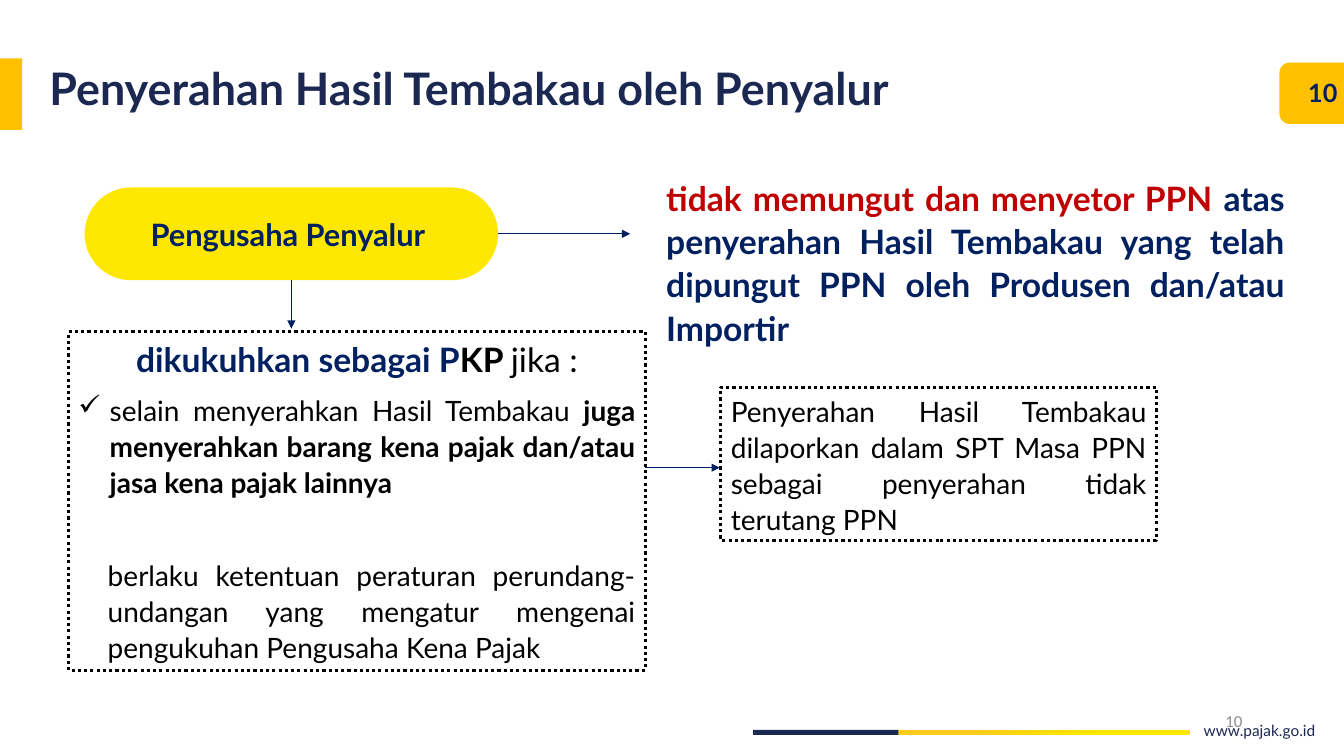
from collections import namedtuple

from lxml.etree import SubElement
from pptx import Presentation
from pptx.dml.color import RGBColor
from pptx.enum.dml import MSO_LINE
from pptx.enum.shapes import MSO_CONNECTOR, MSO_SHAPE
from pptx.enum.text import MSO_ANCHOR, PP_ALIGN
from pptx.oxml.ns import qn
from pptx.util import Inches, Pt

NAVY = RGBColor(0x00, 0x20, 0x60)
INDIGO = RGBColor(0x1B, 0x28, 0x52)
RED = RGBColor(0xC0, 0x00, 0x00)
BLACK = RGBColor(0x00, 0x00, 0x00)
GREY = RGBColor(0x8C, 0x8C, 0x8C)
AMBER = RGBColor(0xFF, 0xC0, 0x00)
GOLD = RGBColor(0xFF, 0xCA, 0x1A)
YELLOW = RGBColor(0xFE, 0xE8, 0x01)

Box = namedtuple("Box", "left top width height")
BODY = {"line_spacing": 1.07, "space_after": Pt(8)}
JUSTIFIED = {**BODY, "alignment": PP_ALIGN.JUSTIFY}
CENTRED = {"alignment": PP_ALIGN.CENTER}


def apply(target, values):
    """Set every attribute in values on target."""
    for name, value in values.items():
        setattr(target, name, value)


def place(box):
    """Turn a box in inches into slide lengths."""
    return [Inches(length) for length in box]


def inside(box, left, top, width, height):
    """Give a box offset from the corner of another."""
    return Box(box.left + left, box.top + top, width, height)


def write(shape, paragraphs, anchor=MSO_ANCHOR.TOP, **frame_values):
    """Fill a shape with (format, runs) paragraphs of (text, size, colour, bold) runs."""
    frame = shape.text_frame
    apply(frame, {"word_wrap": True, "vertical_anchor": anchor, **frame_values})
    for index, (layout, runs) in enumerate(paragraphs):
        paragraph = frame.add_paragraph() if index else frame.paragraphs[0]
        apply(paragraph, layout)
        for text, size, colour, bold in runs:
            run = paragraph.add_run()
            run.text = text
            apply(run.font, {"size": Pt(size), "name": "Lato", "bold": bold})
            run.font.color.rgb = colour
    return frame


def add_text(slide, box, paragraphs, **frame_values):
    """Add a text box."""
    return write(slide.shapes.add_textbox(*place(box)), paragraphs, **frame_values)


def add_block(slide, box, colour=None, kind=MSO_SHAPE.RECTANGLE):
    """Add a shape without outline, filled when a colour is given."""
    block = slide.shapes.add_shape(kind, *place(box))
    block.shadow.inherit = False
    block.line.fill.background()
    if colour is None:
        block.fill.background()
    else:
        block.fill.solid()
        block.fill.fore_color.rgb = colour
    return block


def add_dotted_panel(slide, box, paragraphs):
    """Add a dotted frame with text."""
    panel = add_block(slide, box)
    panel.line.color.rgb = BLACK
    apply(panel.line, {"width": Pt(2.25), "dash_style": MSO_LINE.ROUND_DOT})
    return write(panel, paragraphs)


def add_arrow(slide, *ends):
    """Add a thin arrow from x, y to x, y."""
    arrow = slide.shapes.add_connector(MSO_CONNECTOR.STRAIGHT, *place(ends))
    arrow.line.color.rgb = NAVY
    arrow.line.width = Pt(0.5)
    SubElement(arrow.line._get_or_add_ln(), qn("a:tailEnd"), type="triangle")
    SubElement(arrow._element.spPr, qn("a:effectLst"))


def indent(paragraph, margin, bullet=None):
    """Indent a paragraph, hanging it when it has a bullet."""
    properties = paragraph._p.get_or_add_pPr()
    properties.set("marL", str(Inches(margin)))
    properties.set("indent", str(-Inches(margin) if bullet else 0))
    if bullet:
        SubElement(properties, qn("a:buChar"), char=bullet)


def add_header(slide, box):
    """Add the title with its side tab and page badge."""
    add_block(slide, inside(box, 0, 0, 0.22, 0.71), AMBER)
    title = [({"line_spacing": 0.8},
              [("Penyerahan Hasil Tembakau oleh Penyalur", 32, INDIGO, True)])]
    add_text(slide, inside(box, 0.44, 0.08, 8.87, 0.94), title,
             margin_left=Inches(0.05), margin_right=Inches(0.05))
    add_block(slide, inside(box, 12.69, 0.04, 1.04, 0.61), AMBER,
              MSO_SHAPE.ROUNDED_RECTANGLE)
    add_text(slide, inside(box, 12.85, 0.14, 0.54, 0.4),
             [(CENTRED, [("10", 18, NAVY, True)])])


def add_distributor(slide, box):
    """Add the distributor pill with its two arrows."""
    pill = add_block(slide, box, YELLOW, MSO_SHAPE.ROUNDED_RECTANGLE)
    pill.adjustments[0] = 0.5
    write(pill, [(CENTRED, [("Pengusaha Penyalur ", 22, NAVY, True)])],
          MSO_ANCHOR.MIDDLE)
    centre, middle = box.left + box.width / 2, box.top + box.height / 2
    right, bottom = box.left + box.width, box.top + box.height
    add_arrow(slide, centre, bottom, centre, bottom + 0.48)
    add_arrow(slide, right, middle, right + 1.31, middle)


def add_exemption(slide, box):
    """Add the statement on tax that is not collected."""
    add_text(slide, box, [(JUSTIFIED, [
        ("tidak memungut dan menyetor PPN ", 24, RED, True),
        ("atas penyerahan Hasil Tembakau yang telah dipungut PPN oleh Produsen "
         "dan/atau Importir ", 24, NAVY, True)])])


def add_conditions(slide, box):
    """Add the registration conditions."""
    frame = add_dotted_panel(slide, box, [
        (BODY, [("dikukuhkan sebagai P", 24, NAVY, True),
                ("KP ", 24, BLACK, True),
                ("jika :", 24, BLACK, False)]),
        (JUSTIFIED, [
            ("selain menyerahkan Hasil Tembakau ", 20, BLACK, False),
            ("juga menyerahkan barang kena pajak dan/atau jasa kena pajak lainnya ",
             20, BLACK, True)]),
        ({**JUSTIFIED, "space_before": Pt(33)}, [
            ("berlaku ketentuan peraturan perundang-undangan yang mengatur mengenai "
             "pengukuhan Pengusaha Kena Pajak", 20, BLACK, False)])])
    heading, condition, rule = frame.paragraphs
    indent(condition, 0.31, "✓")
    indent(rule, 0.29)


def add_reporting(slide, box):
    """Add the reporting note and the arrow that leads to it."""
    add_dotted_panel(slide, box, [(JUSTIFIED, [
        ("Penyerahan Hasil Tembakau dilaporkan dalam SPT Masa PPN sebagai "
         "penyerahan tidak terutang PPN", 20, BLACK, False)])])
    arrow_y = box.top + 0.8
    add_arrow(slide, box.left - 0.75, arrow_y, box.left - 0.01, arrow_y)


def add_footer(slide, box):
    """Add the two-part rule, web address and page number."""
    add_block(slide, inside(box, 0, 0.29, 1.45, 0.05), INDIGO)
    glow = add_block(slide, inside(box, 1.44, 0.29, 2.89, 0.05), GOLD)
    glow.fill.gradient()
    glow.fill.gradient_angle = 0
    for stop, position, colour in zip(glow.fill.gradient_stops, (0.23, 0.71),
                                      (GOLD, YELLOW)):
        stop.position = position
        stop.color.rgb = colour
    add_text(slide, inside(box, 4.37, 0.15, 1.45, 0.29),
             [({}, [("www.pajak.go.id", 11, INDIGO, False)])])
    number = add_text(slide, inside(box, 1.95, 0, 3, 0.4),
                      [({"alignment": PP_ALIGN.RIGHT}, [("10", 12, GREY, False)])],
                      anchor=MSO_ANCHOR.MIDDLE)
    number.paragraphs[0].runs[0].font.name = "Calibri"


def main():
    """Build and save the slide."""
    deck = Presentation()
    apply(deck, {"slide_width": Inches(13.33), "slide_height": Inches(7.5)})
    slide = deck.slides.add_slide(deck.slide_layouts[6])
    add_conditions(slide, Box(0.68, 3.29, 5.72, 3.36))
    add_exemption(slide, Box(6.51, 1.69, 6.33, 1.81))
    add_distributor(slide, Box(0.84, 1.86, 4.1, 0.92))
    add_footer(slide, Box(7.47, 6.95, 5.82, 0.44))
    add_header(slide, Box(0, 0.58, 13.33, 1.02))
    add_reporting(slide, Box(7.15, 3.84, 4.32, 1.52))
    deck.save("out.pptx")


if __name__ == "__main__":
    main()
